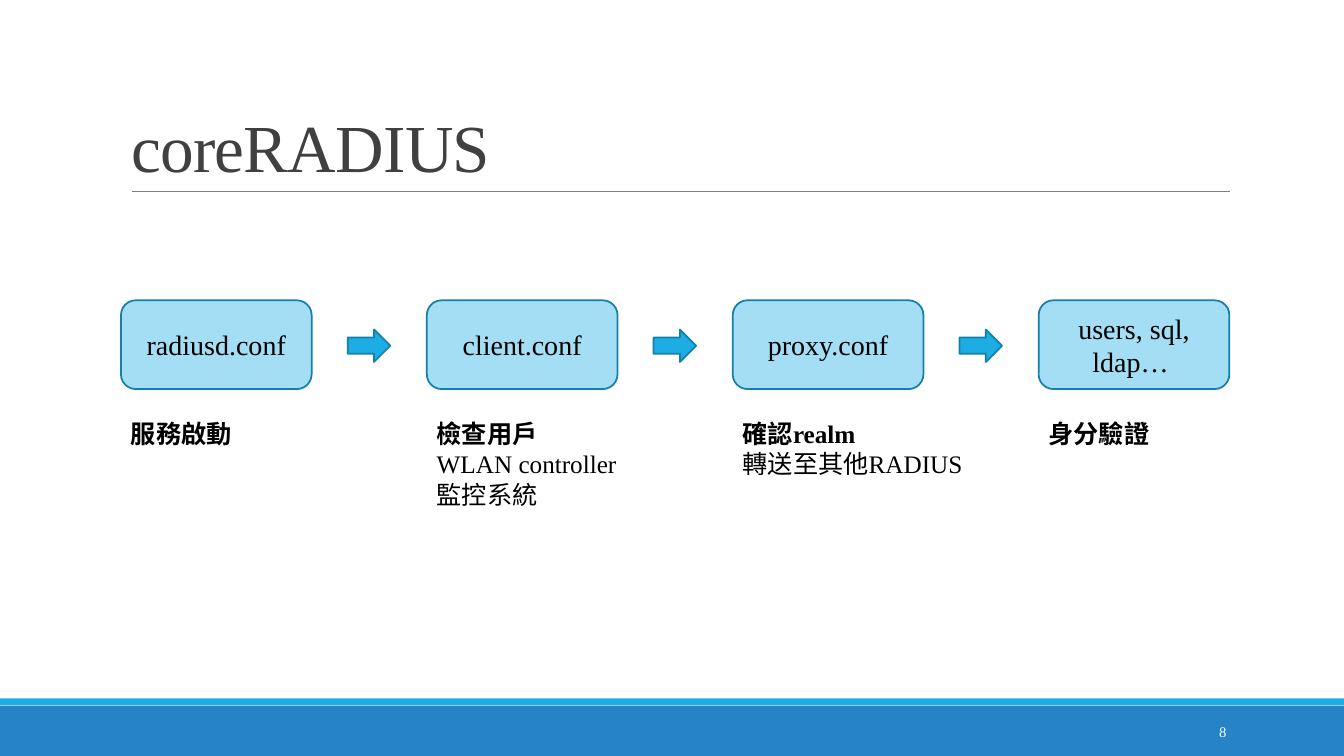
from dataclasses import dataclass

from lxml.etree import SubElement
from pptx import Presentation
from pptx.dml.color import RGBColor
from pptx.enum.shapes import MSO_CONNECTOR, MSO_SHAPE
from pptx.enum.text import MSO_ANCHOR, MSO_AUTO_SIZE, PP_ALIGN
from pptx.oxml.ns import qn
from pptx.shapes.autoshape import Shape
from pptx.slide import Slide
from pptx.text.text import TextFrame
from pptx.util import Pt

FONT = "Times New Roman"
BLACK, WHITE, TITLE_GREY, RULE_GREY = "000000", "FFFFFF", "404040", "808080"
DEEP_BLUE, SKY_BLUE, PALE_BLUE, OUTLINE = "2683C6", "1CADE4", "A4DEF4", "1580A9"

FIRST_LEFT, PITCH = 86.4, 218.5
STEP_TOP, STEP_WIDTH, STEP_HEIGHT = 214.5, 136.2, 63.4
ARROW_OFFSET, ARROW_WIDTH, ARROW_HEIGHT = 162, 30.4, 23.2
NOTE_TOP, NOTE_LINE, NOTE_PADDING = 295.4, 21.8, 7.2


@dataclass
class Area:
    left: float
    top: float
    width: float
    height: float

    def lengths(self) -> tuple[Pt, Pt, Pt, Pt]:
        return Pt(self.left), Pt(self.top), Pt(self.width), Pt(self.height)


@dataclass
class Step:
    file: str
    heading: str
    details: list[str]
    note_width: float


STEPS = [
    Step("radiusd.conf", "服務啟動", [], 88),
    Step("client.conf", "檢查用戶", ["WLAN controller", "監控系統"], 150),
    Step("proxy.conf", "確認realm", ["轉送至其他RADIUS"], 172),
    Step("users, sql, ldap… ", "身分驗證", [], 88),
]


def color(value: str) -> RGBColor:
    return RGBColor.from_string(value)


def format_text(frame: TextFrame, size: float, shade: str, align: PP_ALIGN) -> None:
    for para in frame.paragraphs:
        para.alignment = align
        for span in para.runs:
            span.font.name = FONT
            span.font.size = Pt(size)
            span.font.color.rgb = color(shade)


def add_block(page: Slide, kind: MSO_SHAPE, area: Area, fill: str, line: str = "") -> Shape:
    block = page.shapes.add_shape(kind, *area.lengths())
    block.shadow.inherit = False
    block.fill.solid()
    block.fill.fore_color.rgb = color(fill)
    if line:
        block.line.color.rgb = color(line)
        block.line.width = Pt(1.25)
    else:
        block.line.fill.background()
    return block


def add_frame(page: Slide) -> None:
    add_block(page, MSO_SHAPE.RECTANGLE, Area(0, 504, 960, 36), DEEP_BLUE)
    add_block(page, MSO_SHAPE.RECTANGLE, Area(0, 498.8, 960, 5), SKY_BLUE)
    rule = page.shapes.add_connector(
        MSO_CONNECTOR.STRAIGHT, Pt(94.2), Pt(136.8), Pt(878.8), Pt(136.8)
    )
    rule.line.color.rgb = color(RULE_GREY)
    rule.line.width = Pt(0.5)
    SubElement(rule._element.spPr, qn("a:effectLst"))


def add_title(page: Slide, text: str) -> None:
    title = page.shapes.title
    title.left, title.top, title.width, title.height = Area(86.4, 22.5, 792, 114.2).lengths()
    frame = title.text_frame
    frame.text = text
    frame.auto_size = MSO_AUTO_SIZE.NONE
    frame.vertical_anchor = MSO_ANCHOR.BOTTOM
    format_text(frame, 48, TITLE_GREY, PP_ALIGN.LEFT)
    para = frame.paragraphs[0]
    para.line_spacing = 0.85
    para.runs[0].font._element.set("spc", "-50")


def add_page_number(page: Slide, number: int) -> None:
    box = page.shapes.add_textbox(*Area(779.8, 508.5, 103.2, 28.8).lengths())
    frame = box.text_frame
    frame.word_wrap = True
    frame.text = str(number)
    frame.vertical_anchor = MSO_ANCHOR.MIDDLE
    format_text(frame, 10.5, WHITE, PP_ALIGN.RIGHT)


def add_step(page: Slide, step: Step, left: float) -> None:
    area = Area(left, STEP_TOP, STEP_WIDTH, STEP_HEIGHT)
    block = add_block(page, MSO_SHAPE.ROUNDED_RECTANGLE, area, PALE_BLUE, OUTLINE)
    frame = block.text_frame
    frame.word_wrap = True
    frame.text = step.file
    frame.vertical_anchor = MSO_ANCHOR.MIDDLE
    format_text(frame, 20, BLACK, PP_ALIGN.CENTER)


def add_arrow(page: Slide, step_left: float) -> None:
    top = STEP_TOP + (STEP_HEIGHT - ARROW_HEIGHT) / 2 + 0.8
    area = Area(step_left + ARROW_OFFSET, top, ARROW_WIDTH, ARROW_HEIGHT)
    add_block(page, MSO_SHAPE.RIGHT_ARROW, area, SKY_BLUE, OUTLINE)


def add_note(page: Slide, step: Step, left: float) -> None:
    lines = [step.heading, *step.details]
    height = NOTE_LINE * len(lines) + NOTE_PADDING
    box = page.shapes.add_textbox(*Area(left, NOTE_TOP, step.note_width, height).lengths())
    frame = box.text_frame
    frame.word_wrap = True
    frame.auto_size = MSO_AUTO_SIZE.SHAPE_TO_FIT_TEXT
    frame.text = "\n".join(lines)
    format_text(frame, 18, BLACK, PP_ALIGN.LEFT)
    frame.paragraphs[0].runs[0].font.bold = True


def main() -> None:
    deck = Presentation()
    deck.slide_width, deck.slide_height = Pt(960), Pt(540)
    page = deck.slides.add_slide(deck.slide_layouts[5])
    add_frame(page)
    add_title(page, "coreRADIUS")
    add_page_number(page, 8)
    for index, step in enumerate(STEPS):
        left = FIRST_LEFT + index * PITCH
        add_step(page, step, left)
        add_note(page, step, left)
        if index < len(STEPS) - 1:
            add_arrow(page, left)
    deck.save("out.pptx")


if __name__ == "__main__":
    main()
